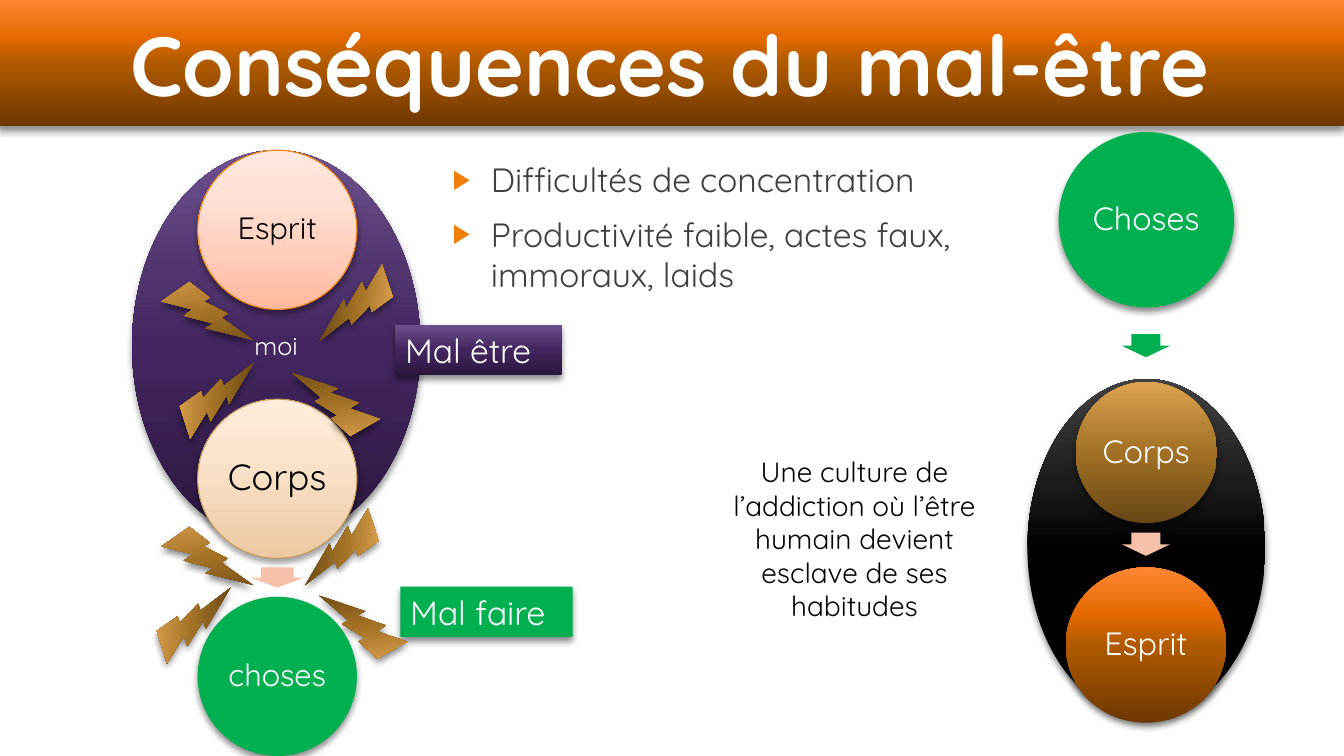
from lxml.etree import SubElement
from pptx import Presentation
from pptx.dml.color import RGBColor
from pptx.enum.shapes import MSO_SHAPE as Shape
from pptx.enum.text import MSO_ANCHOR as Anchor, MSO_AUTO_SIZE as AutoSize, PP_ALIGN as Align
from pptx.oxml.ns import qn
from pptx.util import Inches, Pt

WHITE = RGBColor(0xFF, 0xFF, 0xFF)
BLACK = RGBColor(0x00, 0x00, 0x00)
GREY = RGBColor(0x40, 0x40, 0x40)
GREEN = RGBColor(0x00, 0xB0, 0x50)
ORANGE = RGBColor(0xF0, 0x7F, 0x09)
TAN = RGBColor(0xC1, 0x98, 0x59)
SALMON = RGBColor(0xF6, 0xC0, 0xAB)


def gradient(positions, *colours):
    return [(position, RGBColor.from_string(colour)) for position, colour in zip(positions, colours)]


DEEP = (0, 50, 70, 100)
PALE = (0, 65, 100)
ORANGE_FADE = gradient(DEEP, "6D3800", "B05A00", "E46900", "FF8634")
PURPLE_FADE = gradient(DEEP, "2A173D", "442761", "523670", "6E528D")
BLACK_FADE = gradient(DEEP, "000000", "000000", "1D1D1D", "424242")
BRONZE_FADE = gradient(DEEP, "674615", "A27125", "B88436", "DDA350")
CREAM_FADE = gradient(PALE, "ECC8A1", "FBE5CE", "FFECDA")
PINK_FADE = gradient(PALE, "FFB99E", "FFDED3", "FFE8E0")


class SlideBuilder:
    font_name = "Quicksand"

    def __init__(self, slide):
        self.slide = slide

    def paint(self, shape, fill):
        if isinstance(fill, RGBColor):
            shape.fill.solid()
            shape.fill.fore_color.rgb = fill
            return
        shape.fill.gradient()
        shape.fill.gradient_angle = 90
        stops = shape.element.spPr.find(qn("a:gradFill")).find(qn("a:gsLst"))
        for stop in list(stops):
            stops.remove(stop)
        for position, colour in fill:
            stop = SubElement(stops, qn("a:gs"), pos=str(position * 1000))
            SubElement(stop, qn("a:srgbClr"), val=str(colour))

    def shade(self, shape, opacity=45, blur=5):
        shape.shadow.inherit = False
        effects = shape.element.spPr.find(qn("a:effectLst"))
        shadow = SubElement(effects, qn("a:outerShdw"), blurRad=str(Pt(blur)), dist=str(Pt(3)),
                            dir="5400000", algn="ctr", rotWithShape="0")
        colour = SubElement(shadow, qn("a:srgbClr"), val=str(BLACK))
        SubElement(colour, qn("a:alpha"), val=str(opacity * 1000))

    def add_text(self, paragraph, text, size, colour, align=Align.CENTER, bold=False):
        paragraph.alignment = align
        run = paragraph.add_run()
        run.text = text
        run.font.name = self.font_name
        run.font.size = Pt(size)
        run.font.bold = bold
        run.font.color.rgb = colour

    def shape(self, kind, box, fill, rotation=0):
        shape = self.slide.shapes.add_shape(kind, *map(Inches, box))
        shape.rotation = rotation
        shape.shadow.inherit = False
        shape.line.fill.background()
        self.paint(shape, fill)
        return shape

    def title(self, text, box):
        title = self.slide.shapes.title
        title.left, title.top, title.width, title.height = map(Inches, box)
        self.paint(title, ORANGE_FADE)
        self.shade(title)
        frame = title.text_frame
        frame.word_wrap = True
        frame.auto_size = AutoSize.NONE
        frame.vertical_anchor = Anchor.MIDDLE
        self.add_text(frame.paragraphs[0], text, 60, WHITE, bold=True)

    def oval(self, box, fill, text=None, size=18):
        oval = self.shape(Shape.OVAL, box, fill)
        self.shade(oval)
        if text:
            oval.text_frame.vertical_anchor = Anchor.MIDDLE
            self.add_text(oval.text_frame.paragraphs[0], text, size, WHITE)

    def circle(self, box, fill, text, size, outline=None):
        circle = self.shape(Shape.OVAL, box, fill)
        colour = WHITE
        if outline:
            colour = BLACK
            circle.line.color.rgb = outline
            circle.line.width = Pt(0.75)
            self.shade(circle, 35, 4)
        else:
            self.shade(circle)
        frame = circle.text_frame
        frame.margin_left = frame.margin_right = frame.margin_top = frame.margin_bottom = Inches(0.03)
        frame.vertical_anchor = Anchor.MIDDLE
        frame.paragraphs[0].line_spacing = 0.9
        self.add_text(frame.paragraphs[0], text, size, colour)

    def label(self, box, fill, text):
        label = self.shape(Shape.RECTANGLE, box, fill)
        self.shade(label)
        label.text_frame.vertical_anchor = Anchor.TOP
        self.add_text(label.text_frame.paragraphs[0], text, 24, WHITE, Align.LEFT)

    def down_arrow(self, box, fill):
        arrow = self.shape(Shape.RIGHT_ARROW, box, fill, 90)
        arrow.adjustments[0] = 0.6
        arrow.adjustments[1] = 0.5

    def bolt(self, left, top, rotation):
        self.shade(self.shape(Shape.LIGHTNING_BOLT, (left, top, 0.8, 0.7), BRONZE_FADE, rotation))

    def text_frame(self, box):
        frame = self.slide.shapes.add_textbox(*map(Inches, box)).text_frame
        frame.word_wrap = True
        return frame

    def caption(self, box, text):
        self.add_text(self.text_frame(box).paragraphs[0], text, 20, BLACK)

    def bullets(self, box, lines):
        frame = self.text_frame(box)
        for index, line in enumerate(lines):
            paragraph = frame.add_paragraph() if index else frame.paragraphs[0]
            properties = paragraph._p.get_or_add_pPr()
            properties.set("marL", str(Inches(0.38)))
            properties.set("indent", str(Inches(-0.38)))
            paragraph.space_before = Pt(10 if index else 0)
            colour = SubElement(properties, qn("a:buClr"))
            SubElement(colour, qn("a:srgbClr"), val=str(ORANGE))
            SubElement(properties, qn("a:buSzPct"), val="80000")
            SubElement(properties, qn("a:buFont"), typeface="Arial")
            SubElement(properties, qn("a:buChar"), char="▶")
            self.add_text(paragraph, line, 24, GREY, Align.LEFT)


def main():
    presentation = Presentation()
    presentation.slide_width = Inches(13.33)
    presentation.slide_height = Inches(7.5)
    builder = SlideBuilder(presentation.slides.add_slide(presentation.slide_layouts[5]))

    builder.title("Conséquences du mal-être", (-0.05, 0, 13.38, 1.25))
    builder.bullets((4.39, 1.53, 5.98, 1.48), [
        "Difficultés de concentration",
        "Productivité faible, actes faux, immoraux, laids",
    ])

    builder.oval((1.31, 1.49, 2.86, 3.88), PURPLE_FADE, "moi")
    builder.down_arrow((2.65, 5.46, 0.2, 0.54), SALMON)
    for top, fill, text, size, outline in [
        (3.96, CREAM_FADE, "Corps", 26, TAN),
        (1.49, PINK_FADE, "Esprit", 22, ORANGE),
        (5.92, GREEN, "choses", 22, None),
    ]:
        builder.circle((1.96, top, 1.58, 1.58), fill, text, size, outline)
    builder.label((3.92, 3.22, 1.65, 0.5), PURPLE_FADE, "Mal être")
    builder.label((3.97, 5.82, 1.71, 0.5), GREEN, "Mal faire")

    builder.oval((10.19, 3.76, 2.36, 3.35), BLACK_FADE)
    for box, fill, text in [
        ((10.67, 3.79, 1.4, 1.4), BRONZE_FADE, "Corps"),
        ((10.5, 1.31, 1.74, 1.74), GREEN, "Choses"),
        ((10.57, 5.63, 1.59, 1.54), ORANGE_FADE, "Esprit"),
    ]:
        builder.circle(box, fill, text, 23)
    for top, fill in [(5.16, SALMON), (3.19, GREEN)]:
        builder.down_arrow((11.25, top, 0.23, 0.48), fill)
    builder.caption((7, 4.46, 2.95, 1.78),
                    "Une culture de l’addiction où l’être humain devient esclave de ses habitudes")

    for rotation, corners in [
        (347.2, [(1.64, 2.77), (1.64, 5.2)]),
        (274.3, [(1.74, 3.62), (1.51, 5.85)]),
        (93.6, [(3.14, 2.66), (3, 5.08)]),
        (172, [(3.21, 5.85), (2.94, 3.64)]),
    ]:
        for left, top in corners:
            builder.bolt(left, top, rotation)

    presentation.save("out.pptx")


if __name__ == "__main__":
    main()
